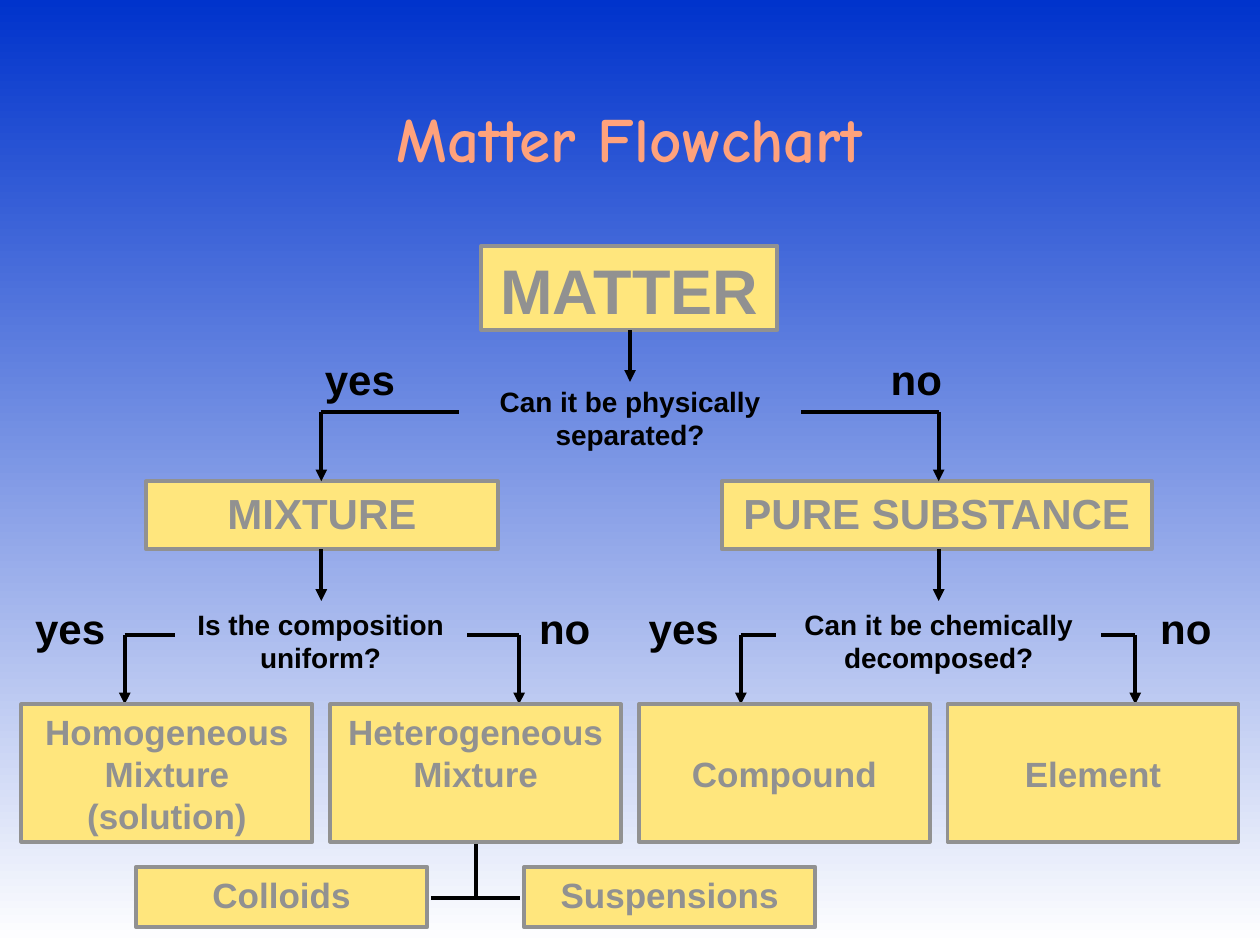
from lxml.etree import SubElement
from pptx import Presentation
from pptx.dml.color import RGBColor
from pptx.enum.shapes import MSO_CONNECTOR, MSO_SHAPE
from pptx.enum.text import MSO_ANCHOR, PP_ALIGN
from pptx.oxml.ns import qn
from pptx.util import Inches, Pt

COLORS = {
    "sky": "0033CC",
    "white": "FFFFFF",
    "title": "FFA27C",
    "box": "FFE67D",
    "gray": "919191",
    "black": "000000",
}
COLUMNS, ROWS = 100, 75  # grid cells of a tenth of an inch


def rgb(name):
    return RGBColor.from_string(COLORS[name])


def write(shape, text, size=20, color="gray", font="Arial",
          align=PP_ALIGN.CENTER, anchor=MSO_ANCHOR.TOP, spacing=None):
    """Fill a shape with bold text; each line becomes a paragraph."""
    frame = shape.text_frame
    frame.word_wrap = True
    frame.vertical_anchor = anchor
    frame.text = text
    for paragraph in frame.paragraphs:
        paragraph.alignment = align
        paragraph.line_spacing = spacing
        for run in paragraph.runs:
            run.font.name = font
            run.font.size = Pt(size)
            run.font.bold = True
            run.font.color.rgb = rgb(color)


class Flowchart:
    line_width = Pt(2.25)

    def __init__(self, deck):
        self.slide = deck.slides.add_slide(deck.slide_layouts[5])
        self.cell_width = deck.slide_width / COLUMNS
        self.cell_height = deck.slide_height / ROWS

    def place(self, column, row, *more):
        """Turn grid positions into lengths, alternating columns and rows."""
        cells = (column, row, *more)
        steps = (self.cell_width, self.cell_height) * 2
        return [round(cell * step) for cell, step in zip(cells, steps)]

    def background(self, top, bottom):
        fill = self.slide.background.fill
        fill.gradient()
        fill.gradient_angle = 270
        for stop, color, position in zip(fill.gradient_stops, (top, bottom), (0, 1)):
            stop.color.rgb = rgb(color)
            stop.position = position

    def title(self, text, *area):
        heading = self.slide.shapes.title
        heading.left, heading.top, heading.width, heading.height = self.place(*area)
        write(heading, text, size=36, color="title", font="Comic Neue",
              anchor=MSO_ANCHOR.MIDDLE, spacing=0.9)

    def box(self, text, *area, **style):
        shape = self.slide.shapes.add_shape(MSO_SHAPE.RECTANGLE, *self.place(*area))
        shape.shadow.inherit = False
        shape.fill.solid()
        shape.fill.fore_color.rgb = rgb("box")
        shape.line.color.rgb = rgb("gray")
        shape.line.width = self.line_width
        write(shape, text, **style)

    def label(self, text, *area, **style):
        write(self.slide.shapes.add_textbox(*self.place(*area)), text,
              color="black", **style)

    def line(self, start, end, arrow=False):
        link = self.slide.shapes.add_connector(
            MSO_CONNECTOR.STRAIGHT, *self.place(*start), *self.place(*end))
        link.line.color.rgb = rgb("black")
        link.line.width = self.line_width
        if arrow:
            SubElement(link.line._get_or_add_ln(), qn("a:tailEnd"), type="triangle")
        SubElement(link._element.spPr, qn("a:effectLst"))

    def decision(self, question, left, width, row, arms, inner, answers, answer_row):
        """A question with a yes arm on the left and a no arm on the right."""
        self.label(question, left, row - 2.7, width, 6.8, size=16)
        for word, arm, end, answer in zip(("yes", "no"), arms, inner, answers):
            self.line((arm, row), (end, row))
            self.line((arm, row), (arm, row + 5.5), arrow=True)
            self.label(word, answer, answer_row, 9.5 if word == "yes" else 6.8, 4.1,
                       size=24, align=PP_ALIGN.LEFT)


def main():
    deck = Presentation()
    deck.slide_width, deck.slide_height = Inches(10), Inches(7.5)
    chart = Flowchart(deck)
    chart.background("sky", "white")
    chart.title("Matter Flowchart", 10.8, 5, 78.3, 12.5)

    # Matter and its two kinds
    chart.box("MATTER", 38.2, 19.5, 23.5, 6.7, size=36)
    chart.box("MIXTURE", 11.6, 38.2, 27.9, 5.4, size=24)
    chart.box("PURE SUBSTANCE", 57.3, 38.2, 34.1, 5.4, size=24)
    for column, row in ((50, 26.2), (25.5, 43.6), (74.5, 43.6)):
        chart.line((column, row), (column, row + 4.1), arrow=True)

    # Questions with their yes and no arms
    chart.decision("Can it be physically separated?", 36.4, 27.2, 32.7,
                   (25.5, 74.5), (36.4, 63.6), (24.8, 69.7), 27.6)
    chart.decision("Is the composition uniform?", 13.9, 23.1, 50.4,
                   (9.9, 41.2), (13.9, 37.1), (1.8, 41.8), 47.3)
    chart.decision("Can it be chemically decomposed?", 60.9, 27.2, 50.4,
                   (58.8, 90.1), (61.6, 87.4), (50.5, 91.1), 47.3)

    # Four classes in equal columns
    classes = (
        ("Homogeneous Mixture\n(solution)", MSO_ANCHOR.TOP),
        ("Heterogeneous Mixture", MSO_ANCHOR.TOP),
        ("Compound", MSO_ANCHOR.MIDDLE),
        ("Element", MSO_ANCHOR.MIDDLE),
    )
    for index, (name, anchor) in enumerate(classes):
        chart.box(name, 1.7 + 24.5 * index, 55.9, 23.1, 10.9, anchor=anchor)

    # Kinds of heterogeneous mixture
    chart.line((34.2, 71.3), (41.3, 71.3))
    chart.line((37.8, 71.3), (37.8, 67))
    for name, column in (("Colloids", 10.8), ("Suspensions", 41.6)):
        chart.box(name, column, 68.8, 23.1, 4.8)

    deck.save("out.pptx")


if __name__ == "__main__":
    main()
